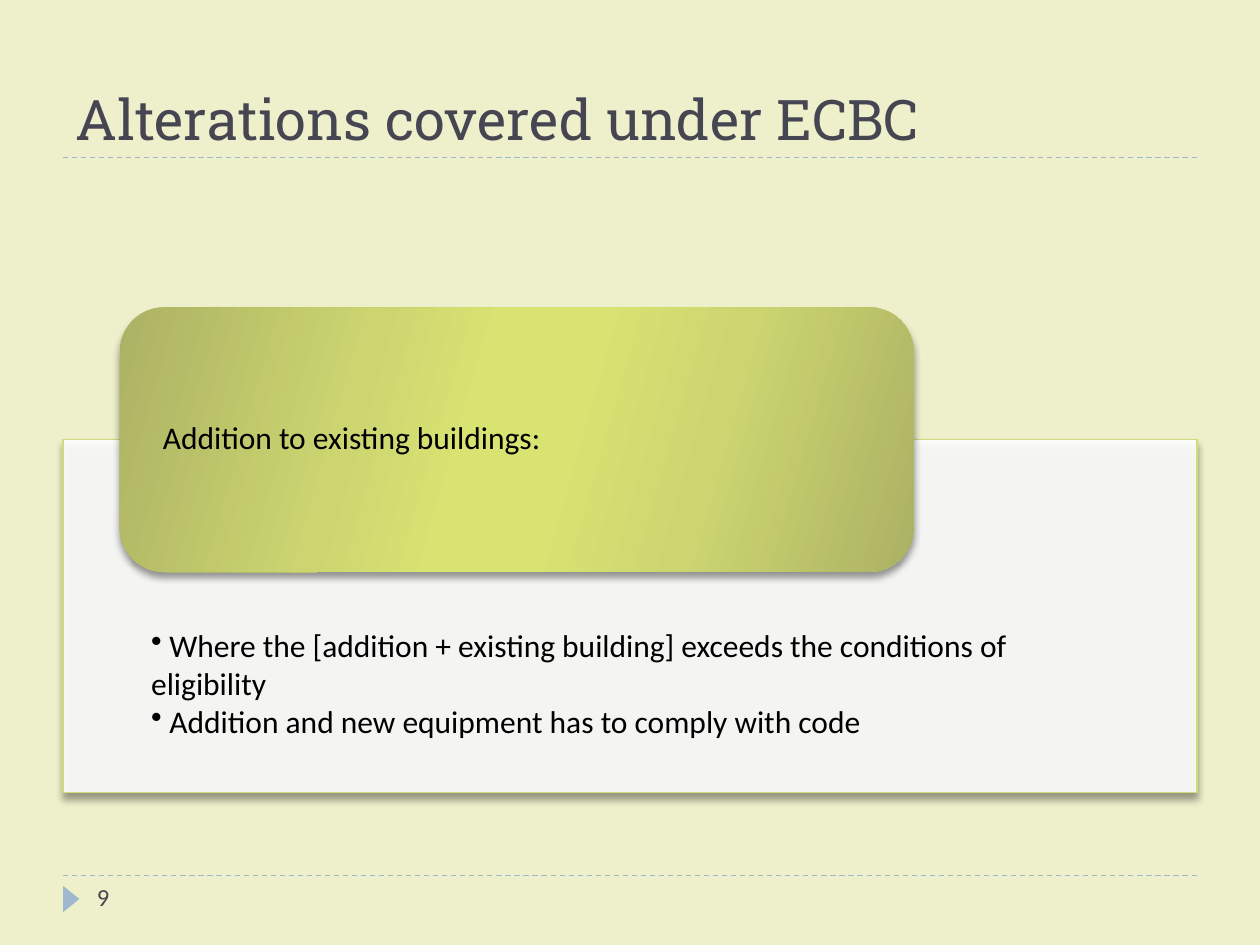
"""Build the slide on alterations covered under ECBC."""
import pptx
import pptx.util
import pptx.dml.color
import pptx.enum.dml
import pptx.enum.shapes
import pptx.enum.text
import pptx.oxml
import pptx.oxml.ns
from lxml import etree

TITLE = "Alterations covered under ECBC"
LABEL = "Addition to existing buildings:"
POINTS = [
    " Where the [addition + existing building] exceeds the conditions of eligibility",
    " Addition and new equipment has to comply with code",
]
PAGE_NUMBER = "9"

THEME = {
    "background": "EDF0CA", "heading": "464653", "accent": "9FB8CD",
    "panel": "FFFFFF", "border": "D2DA7A", "text": "000000",
    "gradient": [(0, "ACB264"), (30, "CCD570"), (45, "D9E371"),
                 (55, "D9E371"), (73, "CCD570"), (100, "ACB264")],
    "gradient_angle": 16,
    "title_font": "Roboto Slab", "body_font": "Calibri",
    "title_size": 32, "body_size": 18, "number_size": 14, "line_width": 0.75,
}

WIDTH, HEIGHT = 10, 7.5
MARGIN = 0.05 * WIDTH
CONTENT = WIDTH - 2 * MARGIN
TITLE_RULE, FOOTER_RULE = 1.25, 6.95
PANEL_TOP, PANEL_HEIGHT = 3.49, 2.8
TAB_WIDTH, TAB_HEIGHT = 0.7 * CONTENT, 0.75 * PANEL_HEIGHT
TAB_LEFT = MARGIN + 0.05 * CONTENT
TAB_TOP = PANEL_TOP - TAB_HEIGHT / 2

SHAPES = pptx.enum.shapes.MSO_SHAPE
ANCHORS = pptx.enum.text.MSO_ANCHOR
inches = pptx.util.Inches


def color(name):
    return pptx.dml.color.RGBColor.from_string(THEME[name])


def drawing(markup):
    return pptx.oxml.parse_xml(markup.replace(" ", f" {pptx.oxml.ns.nsdecls('a')} ", 1))


def add_shape(page, kind, *place):
    shape = page.shapes.add_shape(kind, *map(inches, place))
    shape.shadow.inherit = False
    shape.line.fill.background()
    return shape


def add_rule(page, top):
    rule = page.shapes.add_connector(
        pptx.enum.shapes.MSO_CONNECTOR.STRAIGHT,
        *map(inches, (MARGIN, top, WIDTH - MARGIN, top)))
    rule.line.color.rgb = color("accent")
    rule.line.width = pptx.util.Pt(THEME["line_width"])
    rule.line.dash_style = pptx.enum.dml.MSO_LINE.DASH
    etree.SubElement(rule._element.spPr, pptx.oxml.ns.qn("a:effectLst"))


def cast_shadow(shape):
    effects = shape._element.spPr.find(pptx.oxml.ns.qn("a:effectLst"))
    effects.append(drawing(
        '<a:outerShdw blurRad="50800" dist="43180" dir="5400000" rotWithShape="0">'
        '<a:srgbClr val="000000"><a:alpha val="40000"/></a:srgbClr></a:outerShdw>'))


def fill_gradient(shape):
    stops = "".join(f'<a:gs pos="{share * 1000}"><a:srgbClr val="{tone}"/></a:gs>'
                    for share, tone in THEME["gradient"])
    gradient = drawing(
        f'<a:gradFill rotWithShape="1"><a:gsLst>{stops}</a:gsLst>'
        f'<a:lin ang="{THEME["gradient_angle"] * 60000}" scaled="0"/></a:gradFill>')
    shape._element.spPr.find(pptx.oxml.ns.qn("a:prstGeom")).addnext(gradient)


def write(shape, lines, role, tone, anchor, insets=(0.1, 0.05, 0.1, 0.05), bullet=None):
    frame = shape.text_frame
    frame.word_wrap = True
    frame.vertical_anchor = anchor
    frame.margin_left, frame.margin_top, frame.margin_right, frame.margin_bottom = map(inches, insets)
    frame.text = "\n".join(lines)
    for para in frame.paragraphs:
        para.alignment = pptx.enum.text.PP_ALIGN.LEFT
        if bullet:
            para._p.get_or_add_pPr().append(drawing(f'<a:buChar char="{bullet}"/>'))
        para.font.name = THEME["title_font" if role == "title" else "body_font"]
        para.font.size = pptx.util.Pt(THEME[f"{role}_size"])
        para.font.color.rgb = color(tone)


def main():
    deck = pptx.Presentation()
    deck.slide_width, deck.slide_height = inches(WIDTH), inches(HEIGHT)
    page = deck.slides.add_slide(deck.slide_layouts[6])
    page.background.fill.solid()
    page.background.fill.fore_color.rgb = color("background")

    for top in (FOOTER_RULE, TITLE_RULE):
        add_rule(page, top)

    marker = add_shape(page, SHAPES.ISOSCELES_TRIANGLE, 0.46, 7.07, 0.21, 0.13)
    marker.rotation = 90
    marker.fill.solid()
    marker.fill.fore_color.rgb = color("accent")

    title = page.shapes.add_textbox(*map(inches, (MARGIN, 0.17, CONTENT, TITLE_RULE - 0.17)))
    write(title, [TITLE], "title", "heading", ANCHORS.BOTTOM)

    panel = add_shape(page, SHAPES.RECTANGLE, MARGIN, PANEL_TOP, CONTENT, PANEL_HEIGHT)
    panel.fill.solid()
    panel.fill.fore_color.rgb = color("panel")
    panel._element.spPr.find(".//" + pptx.oxml.ns.qn("a:srgbClr")).append(
        drawing('<a:alpha val="90000"/>'))
    panel.line.color.rgb = color("border")
    panel.line.width = pptx.util.Pt(THEME["line_width"])
    cast_shadow(panel)
    write(panel, POINTS, "body", "text", ANCHORS.TOP, (0.7, 1.48, 0.7, 0.14), "•")

    tab = add_shape(page, SHAPES.ROUNDED_RECTANGLE, TAB_LEFT, TAB_TOP, TAB_WIDTH, TAB_HEIGHT)
    fill_gradient(tab)
    cast_shadow(tab)
    write(tab, [LABEL], "body", "text", ANCHORS.MIDDLE, (0.24, 0, 0.24, 0))
    tab.text_frame.paragraphs[0].line_spacing = 0.9

    number = page.shapes.add_textbox(*map(inches, (0.67, FOOTER_RULE, 2.17, 0.4)))
    write(number, [PAGE_NUMBER], "number", "heading", ANCHORS.TOP)

    deck.save("out.pptx")


if __name__ == "__main__":
    main()
